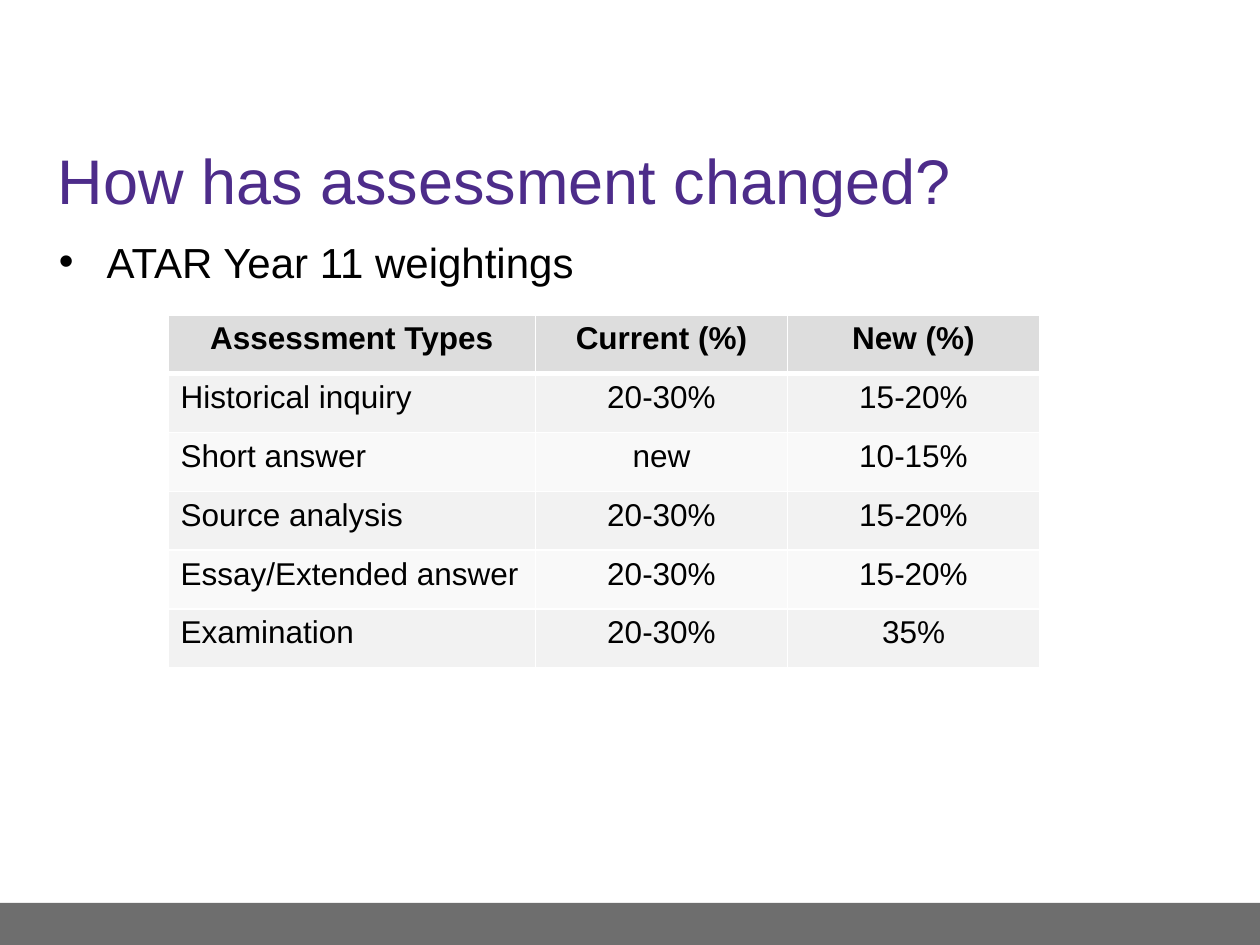
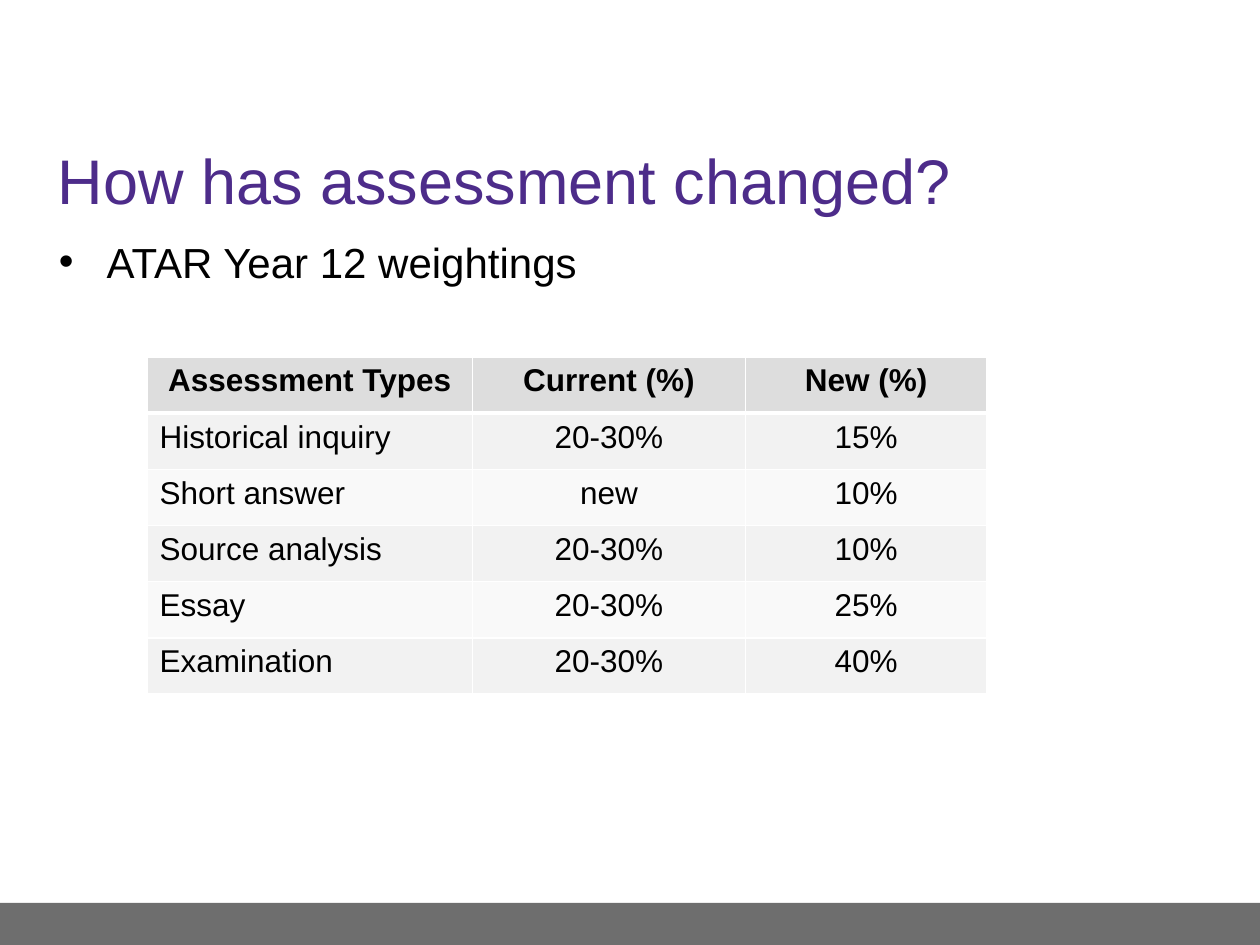
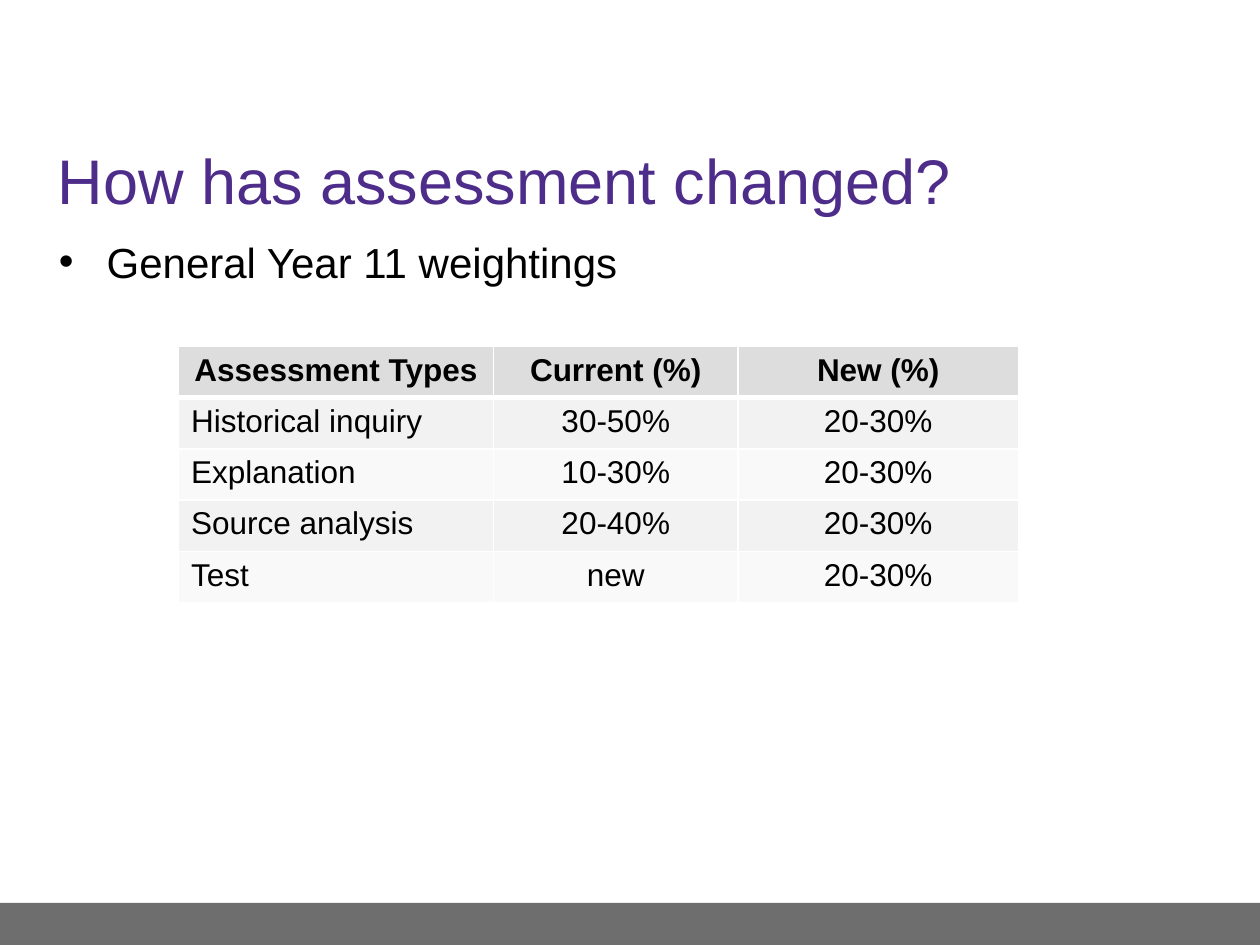
"""Build three slides that compare current and new assessment weightings."""
from lxml.etree import SubElement
from pptx import Presentation
from pptx.dml.color import RGBColor
from pptx.enum.shapes import MSO_SHAPE
from pptx.enum.text import MSO_ANCHOR, MSO_AUTO_SIZE, PP_ALIGN
from pptx.oxml.ns import qn
from pptx.util import Inches, Pt

PURPLE = RGBColor(0x4D, 0x2C, 0x8A)
BLACK = RGBColor(0x00, 0x00, 0x00)
WHITE = RGBColor(0xFF, 0xFF, 0xFF)
FOOTER_GREY = RGBColor(0x6E, 0x6E, 0x6E)
HEADER_GREY = RGBColor(0xDD, 0xDD, 0xDD)
ROW_GREYS = (RGBColor(0xF2, 0xF2, 0xF2), RGBColor(0xF9, 0xF9, 0xF9))

FONT = "Arial"
COLUMNS, ROWS = 120, 90
TITLE = "How has assessment changed?"
TITLE_AREA = (4.3, 11, 112.2, 11)
BODY_AREA = (4.4, 21.4, 112, 60.5)
FOOTER_AREA = (0, 86, COLUMNS, 4)
HEADER = ("Assessment Types", "Current (%)", "New (%)")

WEIGHTINGS = (
    ("ATAR Year 11 weightings", (16, 30), (35, 24, 24), 33.6, (
        ("Historical inquiry", "20-30%", "15-20%"),
        ("Short answer", "new", "10-15%"),
        ("Source analysis", "20-30%", "15-20%"),
        ("Essay/Extended answer", "20-30%", "15-20%"),
        ("Examination", "20-30%", "35%"))),
    ("ATAR Year 12 weightings", (14, 34), (31, 26, 23), 32.1, (
        ("Historical inquiry", "20-30%", "15%"),
        ("Short answer", "new", "10%"),
        ("Source analysis", "20-30%", "10%"),
        ("Essay", "20-30%", "25%"),
        ("Examination", "20-30%", "40%"))),
    ("General Year 11 weightings", (17, 33), (30, 23.3, 26.7), 24.4, (
        ("Historical inquiry", "30-50%", "20-30%"),
        ("Explanation", "10-30%", "20-30%"),
        ("Source analysis", "20-40%", "20-30%"),
        ("Test", "new", "20-30%"))),
)


class Deck:
    """Hold the shared style and the slide being filled."""

    def __init__(self):
        """Start a presentation of 10 by 7.5 inches."""
        self.presentation = Presentation()
        self.presentation.slide_width = Inches(10)
        self.presentation.slide_height = Inches(7.5)
        self.layout = self.presentation.slide_layouts[1]
        self.slide = None

    def across(self, columns):
        """Return the width of a number of grid columns."""
        return round(self.presentation.slide_width * columns / COLUMNS)

    def down(self, rows):
        """Return the height of a number of grid rows."""
        return round(self.presentation.slide_height * rows / ROWS)

    def area(self, left, top, width, height):
        """Return a grid area as lengths."""
        return self.across(left), self.down(top), self.across(width), self.down(height)

    def add_slide(self):
        """Add a slide and make it the current one."""
        self.slide = self.presentation.slides.add_slide(self.layout)

    def format_runs(self, paragraph, size, color, bold=False):
        """Give every run of a paragraph the shared font."""
        for run in paragraph.runs:
            run.font.name = FONT
            run.font.size = Pt(size)
            run.font.bold = bold
            run.font.color.rgb = color

    def fill_placeholder(self, placeholder, text, area, top_margin):
        """Move a placeholder, set its text and return the paragraph."""
        (placeholder.left, placeholder.top,
         placeholder.width, placeholder.height) = self.area(*area)
        frame = placeholder.text_frame
        frame.text = text
        frame.auto_size = MSO_AUTO_SIZE.NONE
        frame.margin_top = self.down(top_margin)
        paragraph = frame.paragraphs[0]
        paragraph.alignment = PP_ALIGN.LEFT
        return paragraph

    def add_title(self, text):
        """Fill the title placeholder."""
        title = self.slide.shapes.title
        paragraph = self.fill_placeholder(title, text, TITLE_AREA, 1.8)
        title.text_frame.vertical_anchor = MSO_ANCHOR.MIDDLE
        self.format_runs(paragraph, 36, PURPLE)

    def add_bullet(self, text):
        """Fill the body placeholder with one bulleted line."""
        paragraph = self.fill_placeholder(
            self.slide.placeholders[1], text, BODY_AREA, 1.1)
        properties = paragraph._p.get_or_add_pPr()
        properties.set("marL", str(Inches(0.38)))
        properties.set("indent", str(-Inches(0.38)))
        SubElement(properties, qn("a:buChar")).set("char", "•")
        paragraph.space_before = Pt(0)
        self.format_runs(paragraph, 24, BLACK)

    def add_borders(self, cell, top, bottom):
        """Draw white borders around a cell, with widths in points."""
        properties = cell._tc.get_or_add_tcPr()
        for side, width in (("L", 1), ("R", 1), ("T", top), ("B", bottom)):
            line = SubElement(properties, qn(f"a:ln{side}"))
            line.set("w", str(Pt(width)))
            fill = SubElement(line, qn("a:solidFill"))
            SubElement(fill, qn("a:srgbClr")).set("val", str(WHITE))

    def add_table(self, position, widths, height, records):
        """Add a weightings table below its header row."""
        lines = (HEADER, *records)
        table = self.slide.shapes.add_table(
            len(lines), len(HEADER),
            *self.area(*position, sum(widths), height)).table
        for column, width in zip(table.columns, widths):
            column.width = self.across(width)
        for row, line in enumerate(lines):
            is_header = row == 0
            color = HEADER_GREY if is_header else ROW_GREYS[(row - 1) % 2]
            for column, text in enumerate(line):
                cell = table.cell(row, column)
                self.add_borders(cell, 3 if row == 1 else 1, 3 if is_header else 1)
                cell.fill.solid()
                cell.fill.fore_color.rgb = color
                cell.text_frame.text = text
                paragraph = cell.text_frame.paragraphs[0]
                centred = is_header or column > 0
                paragraph.alignment = PP_ALIGN.CENTER if centred else PP_ALIGN.LEFT
                self.format_runs(paragraph, 18, BLACK, is_header)

    def add_footer_band(self):
        """Draw the footer band and hand it to the layout all slides share."""
        band = self.slide.shapes.add_shape(
            MSO_SHAPE.RECTANGLE, *self.area(*FOOTER_AREA))
        band.shadow.inherit = False
        band.fill.solid()
        band.fill.fore_color.rgb = FOOTER_GREY
        band.line.fill.background()
        band.element.nvSpPr.cNvPr.set("id", "20")
        self.layout.shapes.element.insert(2, band.element)


def main():
    """Build and save the slides."""
    deck = Deck()
    for bullet, position, widths, height, records in WEIGHTINGS:
        deck.add_slide()
        deck.add_title(TITLE)
        deck.add_bullet(bullet)
        deck.add_table(position, widths, height, records)
    deck.add_footer_band()
    deck.presentation.save("out.pptx")


if __name__ == "__main__":
    main()
